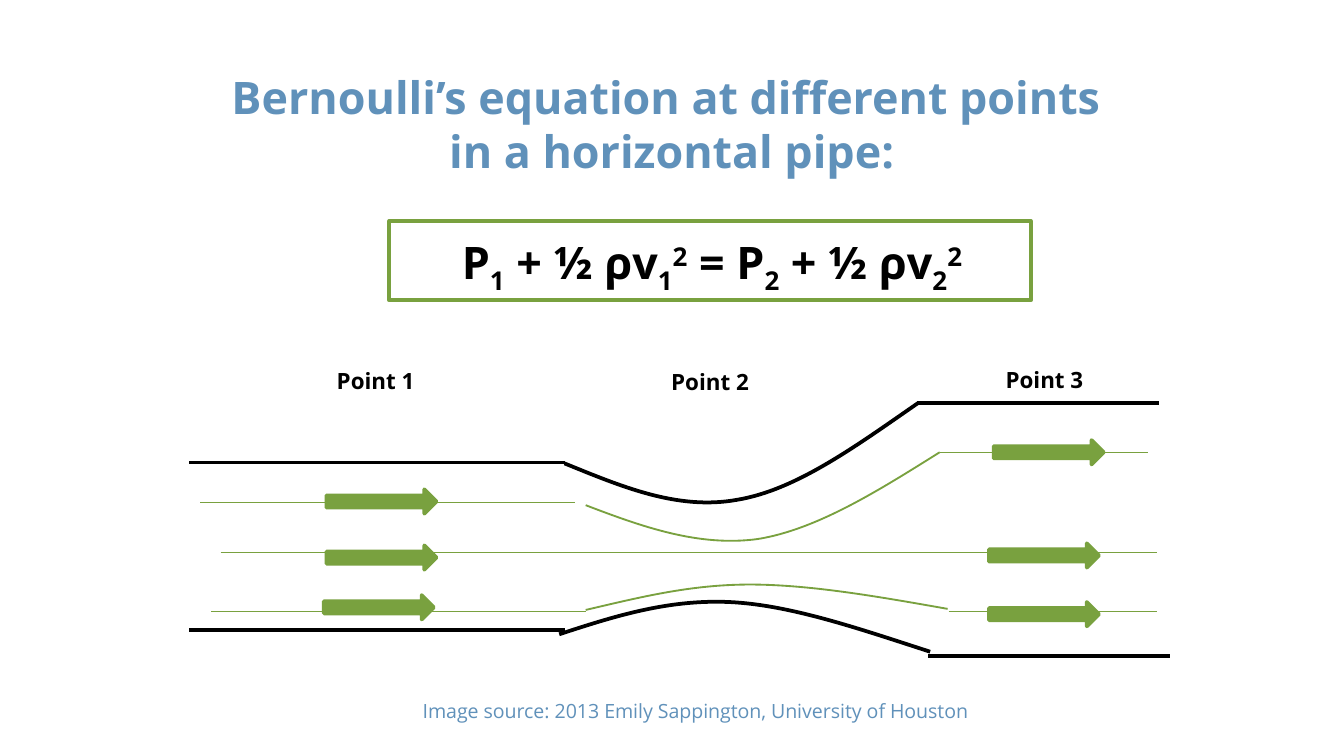
import lxml.etree
import pptx
import pptx.dml.color
import pptx.enum.shapes
import pptx.enum.text
import pptx.oxml.ns
import pptx.util

Cm = pptx.util.Cm
Pt = pptx.util.Pt
qn = pptx.oxml.ns.qn

FONT = "Open Sans"
BLUE, GREEN, BLACK = "6091BA", "79A13F", "000000"
SUBSCRIPT, SUPERSCRIPT = -25000, 30000


def color(hex_string):
    return pptx.dml.color.RGBColor.from_string(hex_string)


def style_line(shape, hex_string, width):
    shape.line.color.rgb = color(hex_string)
    shape.line.width = Pt(width)


def add_run(paragraph, text, size, hex_string, bold=True, baseline=0):
    run = paragraph.add_run()
    run.text = text
    run.font.name = FONT
    run.font.size = Pt(size)
    run.font.bold = bold
    run.font.color.rgb = color(hex_string)
    if baseline:
        run.font._element.set("baseline", str(baseline))


def centred_paragraph(shape, inset=None):
    frame = shape.text_frame
    frame.word_wrap = True
    if inset is not None:
        frame.margin_left = frame.margin_right = Cm(inset)
        frame.margin_top = frame.margin_bottom = Cm(inset)
    paragraph = frame.paragraphs[0]
    paragraph.alignment = pptx.enum.text.PP_ALIGN.CENTER
    return paragraph


def add_text_box(slide, box):
    return slide.shapes.add_textbox(*(Cm(length) for length in box))


def add_title(slide, box):
    paragraph = centred_paragraph(add_text_box(slide, box), inset=0.25)
    add_run(paragraph, "Bernoulli’s equation at different points ", 24, BLUE)
    paragraph.add_line_break()
    add_run(paragraph, "in a horizontal pipe:", 24, BLUE)


def add_equation(slide, box):
    frame = slide.shapes.add_shape(
        pptx.enum.shapes.MSO_SHAPE.RECTANGLE, *(Cm(length) for length in box))
    frame.shadow.inherit = False
    frame.fill.background()
    style_line(frame, GREEN, 2.25)
    frame.text_frame.vertical_anchor = pptx.enum.text.MSO_ANCHOR.MIDDLE
    paragraph = centred_paragraph(frame, inset=0.25)
    paragraph.line_spacing = 1.15
    paragraph._p.get_or_add_pPr().set("marL", str(Cm(0.2)))
    # Each side is: pressure, point number, kinetic term, point number, square
    for pressure, point, square in (("P", "1", "2"), (" = P", "2", "2 ")):
        for text, baseline in ((pressure, 0), (point, SUBSCRIPT), (" + ½ ρv", 0),
                               (point, SUBSCRIPT), (square, SUPERSCRIPT)):
            add_run(paragraph, text, 24, BLACK, baseline=baseline)


def add_caption(slide, box, text, size, hex_string, bold):
    add_run(centred_paragraph(add_text_box(slide, box)), text, size, hex_string, bold)


def add_level_line(slide, left, right, y, hex_string, width):
    line = slide.shapes.add_connector(
        pptx.enum.shapes.MSO_CONNECTOR.STRAIGHT, Cm(left), Cm(y), Cm(right), Cm(y))
    style_line(line, hex_string, width)
    lxml.etree.SubElement(line._element.spPr, qn("a:effectLst"))


def add_curve(slide, origin, controls, hex_string, width):
    """Draw joined cubic curves; each curve starts where the last one ends."""
    points = [(Cm(origin[0] + x), Cm(origin[1] + y)) for x, y in controls]
    builder = slide.shapes.build_freeform(*points[0], scale=1.0)
    builder.add_line_segments(points[3::3], close=False)
    curve = builder.convert_to_shape()
    curve.shadow.inherit = False
    curve.fill.background()
    style_line(curve, hex_string, width)
    # Bend each straight segment with its two control points
    for index, segment in enumerate(list(curve._element.iter(qn("a:lnTo")))):
        bend = lxml.etree.Element(qn("a:cubicBezTo"))
        for x, y in points[3 * index + 1:3 * index + 4]:
            lxml.etree.SubElement(bend, qn("a:pt"),
                                  x=str(x - curve.left), y=str(y - curve.top))
        segment.getparent().replace(segment, bend)


def add_flow_arrow(slide, left, top):
    arrow = slide.shapes.add_shape(
        pptx.enum.shapes.MSO_SHAPE.RIGHT_ARROW, Cm(left), Cm(top), Cm(2.08), Cm(0.46))
    arrow.shadow.inherit = False
    arrow.fill.solid()
    arrow.fill.fore_color.rgb = color(GREEN)
    style_line(arrow, GREEN, 2)


def add_pipe(slide, box):
    left, top, width, height = box

    # Straight walls, then straight streamlines: left, right, y
    walls = ((0, 7.09, 1.12), (0, 7.09, 4.29),
             (13.75, 18.32, 0), (13.96, width, height))
    streamlines = ((0.59, 18.29, 2.82), (0.41, 7.49, 3.94), (0.2, 7.29, 1.88),
                   (14.18, 18.11, 0.93), (14.35, 18.29, 3.94))
    for lines, hex_string, weight in ((walls, BLACK, 2), (streamlines, GREEN, 0.75)):
        for start, end, y in lines:
            add_level_line(slide, left + start, left + end, top + y, hex_string, weight)

    # Curved walls and streamlines around the narrow section
    curved_walls = (
        ((7.09, 1.14), (8.15, 1.57), (9.22, 2.03), (10.34, 1.83),
         (11.46, 1.65), (12.6, 0.81), (13.77, 0)),
        ((6.99, 4.37), (8, 4.04), (9.02, 3.71), (10.19, 3.76),
         (11.35, 3.81), (12.67, 4.27), (14, 4.7)))
    curved_streamlines = (
        ((7.49, 1.93), (8.56, 2.34), (9.63, 2.72), (10.74, 2.57),
         (11.86, 2.39), (13.03, 1.65), (14.18, 0.93)),
        ((7.49, 3.91), (8.48, 3.68), (9.45, 3.43), (10.59, 3.43),
         (11.73, 3.43), (13.03, 3.66), (14.33, 3.89)))
    for curves, hex_string, weight in ((curved_walls, BLACK, 2),
                                       (curved_streamlines, GREEN, 1)):
        for controls in curves:
            add_curve(slide, (left, top), controls, hex_string, weight)

    # Flow arrows at points 1 and 3
    for x, y in ((2.59, 1.63), (2.59, 2.69), (2.54, 3.63),
                 (15.2, 0.7), (15.11, 2.65), (15.11, 3.76)):
        add_flow_arrow(slide, left + x, top + y)

    # Point labels above the pipe
    for text, x, y in (("Point 1", 2.16, -0.81), ("Point 2", 8.48, -0.79),
                       ("Point 3", 14.8, -0.82)):
        add_caption(slide, (left + x, top + y, 2.72, 0.76), text, 12, BLACK, True)


def main():
    presentation = pptx.Presentation()
    presentation.slide_width = Cm(25.4)
    presentation.slide_height = Cm(14.29)
    slide = presentation.slides.add_slide(presentation.slide_layouts[6])

    add_title(slide, (0.86, 1.07, 23.67, 1.6))
    add_equation(slide, (7.36, 4.18, 12.12, 1.5))
    add_pipe(slide, (3.58, 7.62, 18.54, 4.78))
    add_caption(slide, (7.18, 13.08, 11.94, 0.74),
                "Image source: 2013 Emily Sappington, University of Houston",
                10.5, BLUE, False)

    presentation.save("out.pptx")


if __name__ == "__main__":
    main()
